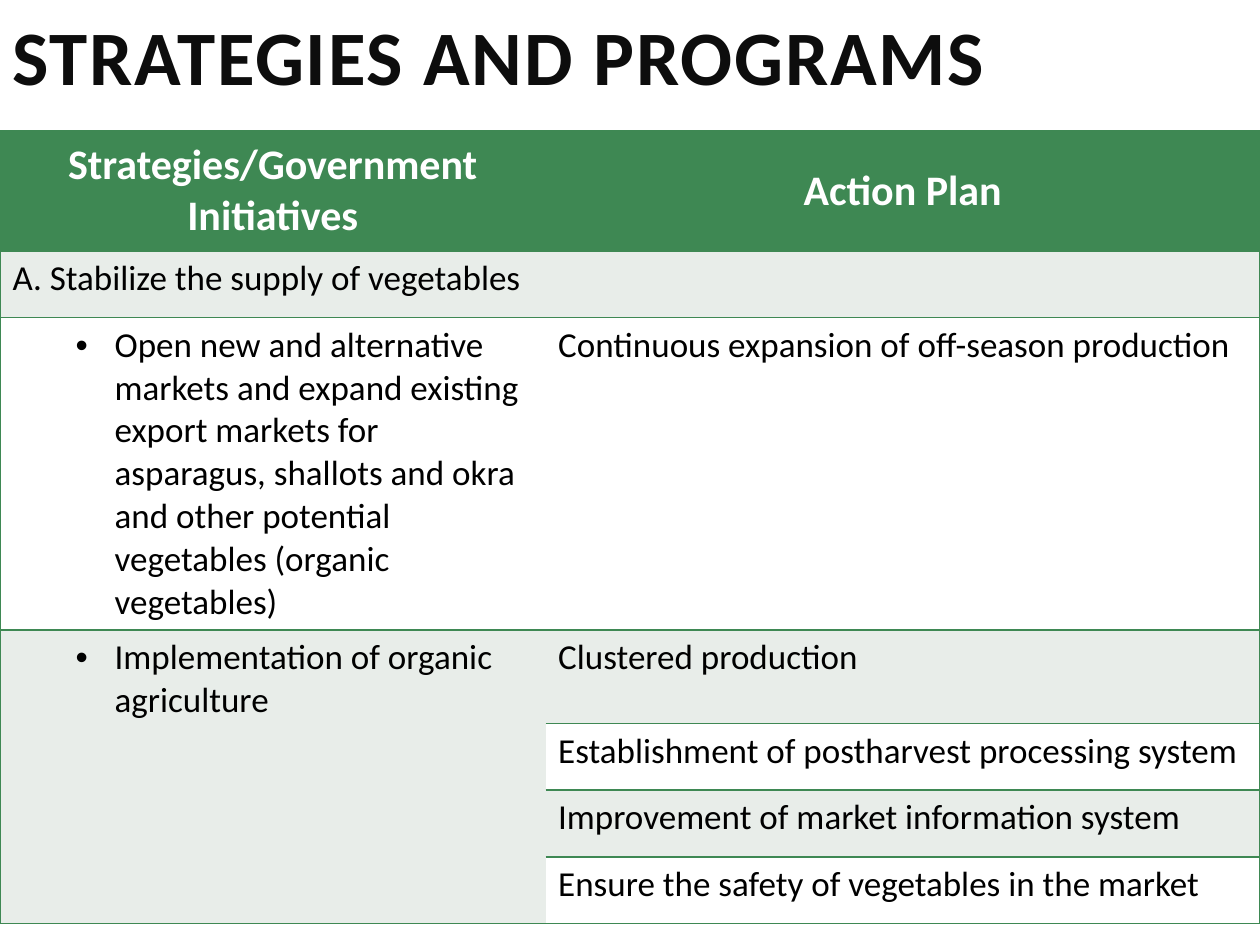
from lxml import etree
from pptx import Presentation
from pptx.dml.color import RGBColor
from pptx.enum.text import MSO_ANCHOR as Anchor, MSO_AUTO_SIZE as Fit, PP_ALIGN as Align
from pptx.oxml.ns import qn
from pptx.util import Inches, Pt

GREEN = RGBColor(0x3E, 0x88, 0x53)
PALE = RGBColor(0xE8, 0xED, 0xE9)
WHITE = RGBColor(0xFF, 0xFF, 0xFF)
BLACK = RGBColor(0, 0, 0)
INK = RGBColor(0x0D, 0x0D, 0x0D)
FONT = "Calibri"
PLAIN = "{2D5ABB26-0587-4C30-8999-92F81FD0307C}"  # no style, no grid

COLS = [4.33, 5.67]
ROWS = [0.95, 0.53, 2.46, 0.74, 0.53, 0.53, 0.53]
TEXTS = [
    ("Strategies/Government Initiatives", "Action Plan"),
    ("A. Stabilize the supply of vegetables", ""),
    ("Open new and alternative markets and expand existing export markets for "
     "asparagus, shallots and okra and other potential vegetables (organic vegetables)",
     "Continuous expansion of off-season production"),
    ("Implementation of organic agriculture", "Clustered production"),
    ("", "Establishment of postharvest processing system"),
    ("", "Improvement of market information system"),
    ("", "Ensure the safety of vegetables in the market"),
]


def add_run(para, text, size, color, bold=False):
    run = para.add_run()
    run.text = text
    font = run.font
    font.name, font.size, font.bold = FONT, Pt(size), bold
    font.color.rgb = color
    return run


def add_bullet(para):
    para.level = 1
    props = para._p.get_or_add_pPr()
    props.set("marL", str(Inches(0.81)))
    props.set("indent", str(Inches(-0.31)))
    etree.SubElement(props, qn("a:buFont"), typeface="Arial")
    etree.SubElement(props, qn("a:buChar"), char="•")


def add_edges(cell, sides):
    props = cell._tc.get_or_add_tcPr()
    for spot, side in enumerate(sides):
        line = etree.Element(qn("a:ln" + side), w=str(Pt(1)))
        fill = etree.SubElement(line, qn("a:solidFill"))
        etree.SubElement(fill, qn("a:srgbClr"), val=str(GREEN))
        props.insert(spot, line)


def add_title(slide, left, top, width, height):
    title = slide.shapes.title
    title.left, title.top, title.width, title.height = left, top, width, height
    frame = title.text_frame
    frame.word_wrap = True
    frame.auto_size = Fit.NONE
    frame.vertical_anchor = Anchor.MIDDLE
    para = frame.paragraphs[0]
    para.alignment = Align.LEFT
    para.line_spacing = 0.8
    run = add_run(para, "STRATEGIES AND PROGRAMS", 44, INK, True)
    run.font._element.set("spc", "100")


def fill_cell(cell, row, col, text):
    head = row == 0
    cell.fill.solid()
    cell.fill.fore_color.rgb = GREEN if head else PALE if row % 2 else WHITE
    if cell.is_spanned:
        return
    wide = cell.is_merge_origin and cell.span_width > 1
    add_edges(cell, "LRTB" if wide else "RTB" if col else "LTB")
    cell.vertical_anchor = Anchor.MIDDLE if head else Anchor.TOP
    para = cell.text_frame.paragraphs[0]
    para.alignment = Align.CENTER if head else Align.LEFT
    if row > 1 and col == 0:
        add_bullet(para)
    add_run(para, text, 24 if head else 20, WHITE if head else BLACK, head)


def add_plan(slide, left, top, width, height):
    frame = slide.shapes.add_table(len(ROWS), len(COLS), left, top, width, height)
    table = frame.table
    table._tbl.tblPr.find(qn("a:tableStyleId")).text = PLAIN
    for col, size in zip(table.columns, COLS):
        col.width = Inches(size)
    for row, size in zip(table.rows, ROWS):
        row.height = Inches(size)
    # Section heading across both columns, one strategy beside four plans
    table.cell(1, 0).merge(table.cell(1, 1))
    table.cell(3, 0).merge(table.cell(6, 0))
    for row, texts in enumerate(TEXTS):
        for col, text in enumerate(texts):
            fill_cell(table.cell(row, col), row, col, text)


def main():
    deck = Presentation()
    deck.slide_width, deck.slide_height = Inches(10), Inches(7.5)
    slide = deck.slides.add_slide(deck.slide_layouts[5])
    add_title(slide, 0, 0, Inches(9), Inches(1))
    add_plan(slide, 0, Inches(1.04), Inches(sum(COLS)), Inches(sum(ROWS)))
    deck.save("out.pptx")


if __name__ == "__main__":
    main()
